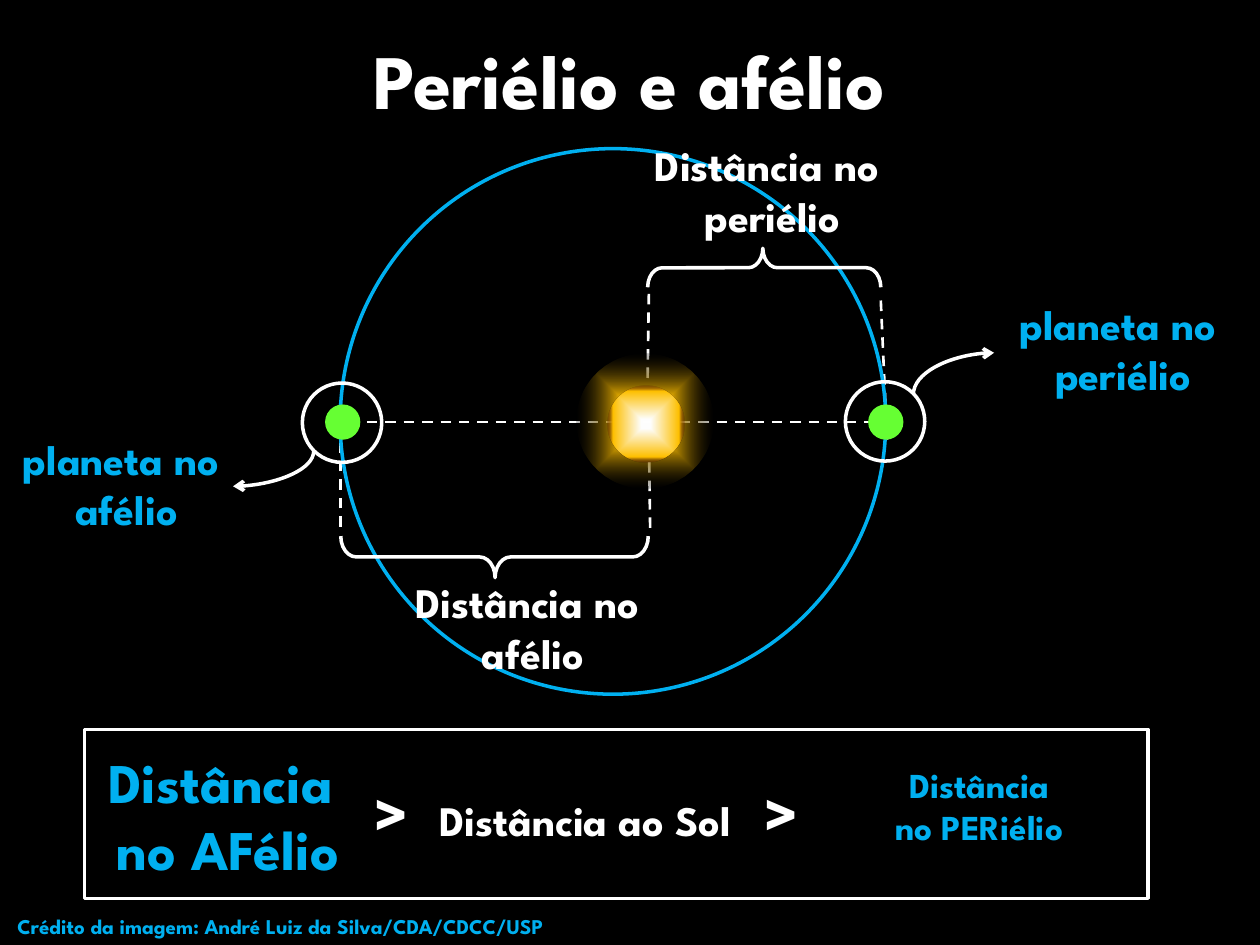
from lxml import etree
from pptx import Presentation
from pptx import util as u
from pptx.dml.color import RGBColor
from pptx.enum import dml, shapes, text
from pptx.oxml import ns

FONT = "League Spartan"
COLORS = {"white": "FFFFFF", "blue": "00B0F0", "green": "66FF33",
          "black": "000000", "amber": "FFC000", "maroon": "4D0808"}
KIND = shapes.MSO_SHAPE


def rgb(name):
    return RGBColor.from_string(COLORS[name])


def lengths(*values):
    return [u.Inches(value) for value in values]


def add_child(parent, tag, **attributes):
    return etree.SubElement(parent, ns.qn(tag), attributes)


def style_paragraph(para, size, color, align):
    para.alignment = align
    para.font.name = FONT
    para.font.size = u.Pt(size)
    para.font.bold = True
    para.font.color.rgb = rgb(color)


def add_label(page, place, lines, size, color, align=text.PP_ALIGN.CENTER):
    frame = page.shapes.add_textbox(*lengths(*place)).text_frame
    frame.word_wrap = True
    frame.auto_size = text.MSO_AUTO_SIZE.SHAPE_TO_FIT_TEXT
    frame.text = "\n".join(lines)
    for para in frame.paragraphs:
        style_paragraph(para, size, color, align)
    return frame


def add_title(page, words):
    title = page.shapes.title
    title.left, title.top, title.width, title.height = lengths(0.75, 0.21, 8.5, 1.61)
    frame = title.text_frame
    frame.text = words
    frame.auto_size = text.MSO_AUTO_SIZE.NONE
    frame.vertical_anchor = text.MSO_ANCHOR.TOP
    style_paragraph(frame.paragraphs[0], 44, "white", text.PP_ALIGN.CENTER)


def add_outline(page, kind, place, color="white"):
    shape = page.shapes.add_shape(kind, *lengths(*place))
    shape.shadow.inherit = False
    shape.fill.background()
    shape.line.color.rgb = rgb(color)
    shape.line.width = u.Pt(2)
    return shape


def add_brace(page, place, rotation, middle):
    brace = add_outline(page, KIND.LEFT_BRACE, place)
    brace.rotation = rotation
    brace.adjustments[0] = 0.373
    brace.adjustments[1] = middle


def add_planet(page, left):
    planet = page.shapes.add_shape(KIND.OVAL, *lengths(left, 3.21, 0.28, 0.28))
    planet.shadow.inherit = False
    planet.fill.solid()
    planet.fill.fore_color.rgb = rgb("green")
    planet.line.fill.background()


def add_line(page, kind, ends, width):
    line = page.shapes.add_connector(kind, *lengths(*ends))
    line.line.color.rgb = rgb("white")
    line.line.width = u.Pt(width)
    return line


def add_dashed_line(page, *ends):
    line = add_line(page, shapes.MSO_CONNECTOR.STRAIGHT, ends, 1.5)
    line.line.dash_style = dml.MSO_LINE.DASH
    add_child(line._element.spPr, "a:effectLst")


def add_curved_arrow(page, *ends):
    arrow = add_line(page, shapes.MSO_CONNECTOR.CURVE, ends, 2)
    properties = arrow._element.spPr
    properties.find(ns.qn("a:prstGeom")).set("prst", "curvedConnector2")
    add_child(properties.find(ns.qn("a:ln")), "a:headEnd", type="arrow")
    add_child(properties, "a:effectLst")


def add_glow(group, place, stops):
    glow = group.shapes.add_shape(KIND.OVAL, *lengths(*place))
    glow.shadow.inherit = False
    glow.line.fill.background()
    gradient = etree.Element(ns.qn("a:gradFill"), rotWithShape="1")
    stop_list = add_child(gradient, "a:gsLst")
    for position, color, opacity in stops:
        stop = add_child(stop_list, "a:gs", pos=str(position * 1000))
        tint = add_child(stop, "a:srgbClr", val=COLORS[color])
        if opacity < 100:
            add_child(tint, "a:alpha", val=str(opacity * 1000))
    route = add_child(gradient, "a:path", path="shape")
    add_child(route, "a:fillToRect", l="50000", t="50000", r="50000", b="50000")
    glow._element.spPr.find(ns.qn("a:prstGeom")).addnext(gradient)


def add_sun(page):
    sun = page.shapes.add_group_shape()
    add_glow(sun, (4.58, 2.81, 1.08, 1.07),
             [(7, "white", 100), (32, "amber", 100), (100, "black", 23)])
    add_glow(sun, (4.82, 3.06, 0.61, 0.61),
             [(12, "white", 100), (85, "amber", 100), (100, "maroon", 17)])


def add_comparison(page):
    frame = add_label(page, (2.87, 6.09, 4.25, 0.71), [""], 36, "white", text.PP_ALIGN.LEFT)
    para = frame.paragraphs[0]
    for words, size in ((">\t", 36), ("Distância ao Sol\t", 24), (">", 36)):
        span = para.add_run()
        span.text = words
        span.font.size = u.Pt(size)
    properties = para._p.get_or_add_pPr()
    tabs = etree.Element(ns.qn("a:tabLst"))
    for position in (0.52, 3.1):
        add_child(tabs, "a:tab", pos=str(u.Inches(position)), algn="l")
    properties.find(ns.qn("a:defRPr")).addprevious(tabs)


def main():
    deck = Presentation()
    deck.slide_width, deck.slide_height = lengths(10, 7.5)
    page = deck.slides.add_slide(deck.slide_layouts[5])
    page.background.fill.solid()
    page.background.fill.fore_color.rgb = rgb("black")

    add_dashed_line(page, 2.7, 4.18, 2.7, 3.35)
    add_dashed_line(page, 5.16, 4.19, 5.15, 3.47)
    add_dashed_line(page, 5.14, 3, 5.15, 2.3)
    add_dashed_line(page, 7.04, 3.49, 6.99, 2.37)
    add_dashed_line(page, 2.62, 3.35, 7.13, 3.35)
    add_outline(page, KIND.OVAL, (2.7, 1.18, 4.33, 4.33), "blue")
    add_brace(page, (5.91, 1.2, 0.31, 1.85), 90, 0.506)
    add_brace(page, (3.76, 3.2, 0.33, 2.44), 270, 0.502)
    add_title(page, "Periélio e afélio")

    add_label(page, (4.59, 1.06, 3.08, 0.91), ["Distância no ", "periélio"], 24, "white")
    add_label(page, (2.69, 4.53, 3.08, 0.91), ["Distância no ", "afélio"], 24, "white")
    add_label(page, (7.63, 2.32, 2.57, 0.91), ["planeta no ", "periélio"], 24, "blue")
    add_label(page, (-0.28, 3.39, 2.57, 0.91), ["planeta no ", "afélio"], 24, "blue")
    add_outline(page, KIND.OVAL, (6.71, 3.03, 0.63, 0.63))
    add_outline(page, KIND.OVAL, (2.4, 3.04, 0.63, 0.63))
    add_curved_arrow(page, 7.89, 2.8, 7.25, 3.13)
    add_curved_arrow(page, 1.85, 3.86, 2.49, 3.58)

    add_label(page, (6.66, 6.01, 2.3, 0.77), ["Distância ", "no PERiélio "], 20, "blue")
    add_label(page, (0.67, 5.88, 2.28, 1.18), ["Distância ", "no AFélio"], 32, "blue")
    add_comparison(page)
    add_outline(page, KIND.RECTANGLE, (0.67, 5.79, 8.44, 1.34))
    add_sun(page)
    for left in (2.58, 6.89):
        add_planet(page, left)
    add_label(page, (0.04, 7.2, 5.28, 0.3),
              ["Crédito da imagem: André Luiz da Silva/CDA/CDCC/USP"], 12, "blue",
              text.PP_ALIGN.LEFT)
    deck.save("out.pptx")


if __name__ == "__main__":
    main()
